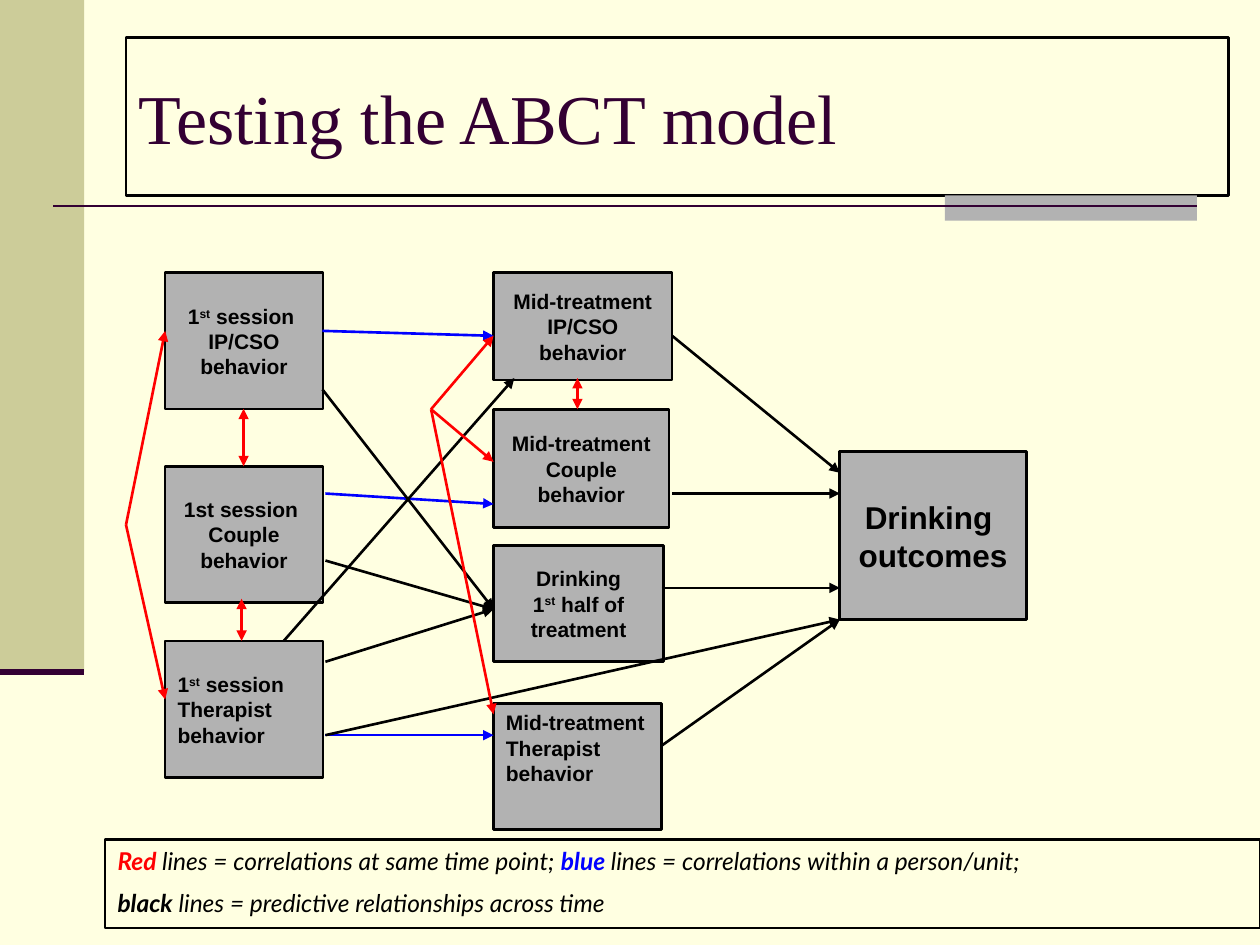
"""Build the slide that shows the ABCT model as a path diagram."""
from lxml.etree import SubElement
from pptx import Presentation
from pptx.dml.color import RGBColor
from pptx.enum.shapes import MSO_CONNECTOR, MSO_SHAPE
from pptx.enum.text import MSO_ANCHOR, MSO_AUTO_SIZE, PP_ALIGN
from pptx.oxml.ns import qn
from pptx.util import Cm, Pt

COLORS = {
    "background": "FFFFE1", "khaki": "CCCC99", "gray": "B2B2B2", "plum": "330033",
    "black": "000000", "red": "FF0000", "blue": "0000FF",
}
FIRST_X, MID_X, OUTCOME_X = 3.33, 9.95, 16.93
FIRST_SIZE = (3.18, 2.75)
SUPER_ST = ("st", {"baseline": 30000})

CENTERED_BOXES = [
    (FIRST_X, 5.5, *FIRST_SIZE, [["1", SUPER_ST, " session "], "IP/CSO", "behavior"]),
    (FIRST_X, 9.4, *FIRST_SIZE, ["1st session ", "Couple", "behavior"]),
    (MID_X, 5.5, 3.6, 2.16, ["Mid-treatment IP/CSO behavior"]),
    (MID_X, 8.25, 3.54, 2.39, ["Mid-treatment Couple behavior"]),
    (MID_X, 11, 3.43, 2.34, ["Drinking", ["1", SUPER_ST, " half of"], "treatment"]),
]
THERAPIST_BOXES = [
    (FIRST_X, 12.92, *FIRST_SIZE, [["1", SUPER_ST, " session"], "Therapist", "behavior"], 0.62),
    (MID_X, 14.18, 3.39, 2.54, ["Mid-treatment Therapist behavior"], 0.13),
]
ARROWS = {
    "blue": [
        ((6.5, 6.67), (MID_X, 6.77)),
        ((6.56, 9.95), (MID_X, 10.16)),
        ((6.56, 14.82), (MID_X, 14.82)),
    ],
    "black": [
        ((6.5, 7.85), (MID_X, 12.28)),
        ((6.56, 11.3), (MID_X, 12.28)),
        ((6.56, 13.34), (MID_X, 12.28)),
        ((5.72, 12.92), (10.37, 7.62)),
        ((13.55, 6.77), (OUTCOME_X, 9.53)),
        ((13.55, 9.95), (OUTCOME_X, 9.95)),
        ((13.34, 11.85), (OUTCOME_X, 11.85)),
        ((13.34, 15.03), (OUTCOME_X, 12.49)),
        ((6.56, 14.82), (OUTCOME_X, 12.49)),
    ],
}
TWO_WAY_ARROWS = [
    ((4.91, 8.24), (4.91, 9.4)),
    ((4.87, 12.07), (4.87, 12.92)),
    ((11.64, 7.62), (11.64, 8.25)),
]
RED_FANS = [
    ((2.54, 10.58), FIRST_X, [6.67, 14.1]),
    ((8.69, 8.25), MID_X, [6.77, 9.31, 14.4]),
]


def rgb(name):
    return RGBColor.from_string(COLORS[name])


def write_text(sp, paragraphs, font="Arial", size=12, color="black", bold=True, italic=False,
               align=PP_ALIGN.CENTER, anchor=MSO_ANCHOR.MIDDLE, space_before=0, top=0.13):
    tf = sp.text_frame
    tf.word_wrap = True
    tf.auto_size = MSO_AUTO_SIZE.NONE
    tf.vertical_anchor = anchor
    tf.margin_top = Cm(top)
    for i, runs in enumerate(paragraphs):
        p = tf.paragraphs[0] if i == 0 else tf.add_paragraph()
        p.alignment = align
        p.space_before = Pt(space_before)
        for run in [runs] if isinstance(runs, str) else runs:
            text, changes = (run, {}) if isinstance(run, str) else run
            r = p.add_run()
            r.text = text
            r.font.name = font
            r.font.size = Pt(size)
            r.font.bold = changes.get("bold", bold)
            r.font.italic = italic
            r.font.color.rgb = rgb(changes.get("color", color))
            if "baseline" in changes:
                r.font._element.set("baseline", str(changes["baseline"]))


def add_box(s, x, y, w, h, fill=None, line=None):
    sp = s.shapes.add_shape(MSO_SHAPE.RECTANGLE, Cm(x), Cm(y), Cm(w), Cm(h))
    sp.shadow.inherit = False
    if fill:
        sp.fill.solid()
        sp.fill.fore_color.rgb = rgb(fill)
    else:
        sp.fill.background()
    if line:
        sp.line.color.rgb = rgb(line)
        sp.line.width = Pt(1.5)
    else:
        sp.line.fill.background()
    return sp


def add_line(s, start, end, color, width=1.5, ends=()):
    points = [Cm(v) for v in (*start, *end)]
    line = s.shapes.add_connector(MSO_CONNECTOR.STRAIGHT, *points)
    line.line.color.rgb = rgb(color)
    line.line.width = Pt(width)
    for end_name in ends:
        SubElement(line.line._get_or_add_ln(), qn(f"a:{end_name}"), type="triangle")
    SubElement(line._element.spPr, qn("a:effectLst"))


def add_decoration(s):
    add_box(s, 0, 0, 1.7, 13.55, fill="khaki")
    add_box(s, 19.05, 3.94, 5.08, 0.51, fill="gray")
    add_line(s, (1.07, 4.15), (24.13, 4.15), "plum")
    add_line(s, (0, 13.55), (1.7, 13.55), "plum", width=3.5)


def add_title(s):
    title = s.shapes.title
    title.left, title.top, title.width, title.height = Cm(2.54), Cm(0.76), Cm(22.23), Cm(3.18)
    title.line.color.rgb = rgb("black")
    title.line.width = Pt(1.5)
    write_text(title, ["Testing the ABCT model"], font="Times New Roman", size=40,
               color="plum", bold=False, align=PP_ALIGN.LEFT)


def add_boxes(s):
    for *place, text in CENTERED_BOXES:
        write_text(add_box(s, *place, fill="gray", line="black"), text)
    for *place, text, top in THERAPIST_BOXES:
        write_text(add_box(s, *place, fill="gray", line="black"), text,
                   align=PP_ALIGN.LEFT, anchor=MSO_ANCHOR.TOP, top=top)
    outcome = add_box(s, OUTCOME_X, 9.1, 3.76, 3.39, fill="gray", line="black")
    write_text(outcome, ["Drinking ", "outcomes"], size=18)


def add_arrows(s):
    for color, arrows in ARROWS.items():
        for start, end in arrows:
            add_line(s, start, end, color, ends=["tailEnd"])
    for start, end in TWO_WAY_ARROWS:
        add_line(s, start, end, "red", ends=["headEnd", "tailEnd"])
    for hub, x, heights in RED_FANS:
        for y in heights:
            add_line(s, hub, (x, y), "red", ends=["tailEnd"])


def add_legend(s):
    legend = add_box(s, 2.12, 16.93, 23.28, 1.78, line="black")
    write_text(legend, [
        [("Red ", {"color": "red", "bold": True}),
         "lines = correlations at same time point; ",
         ("blue ", {"color": "blue", "bold": True}),
         "lines = correlations within a person/unit;"],
        [("black", {"bold": True}), " lines = predictive relationships across time"],
    ], font="Lato", size=14, bold=False, italic=True, align=PP_ALIGN.LEFT,
        anchor=MSO_ANCHOR.TOP, space_before=7)


def main():
    prs = Presentation()
    prs.slide_width, prs.slide_height = Cm(25.4), Cm(19.05)
    s = prs.slides.add_slide(prs.slide_layouts[5])
    s.background.fill.solid()
    s.background.fill.fore_color.rgb = rgb("background")
    add_decoration(s)
    add_title(s)
    add_boxes(s)
    add_arrows(s)
    add_legend(s)
    prs.save("out.pptx")


if __name__ == "__main__":
    main()
